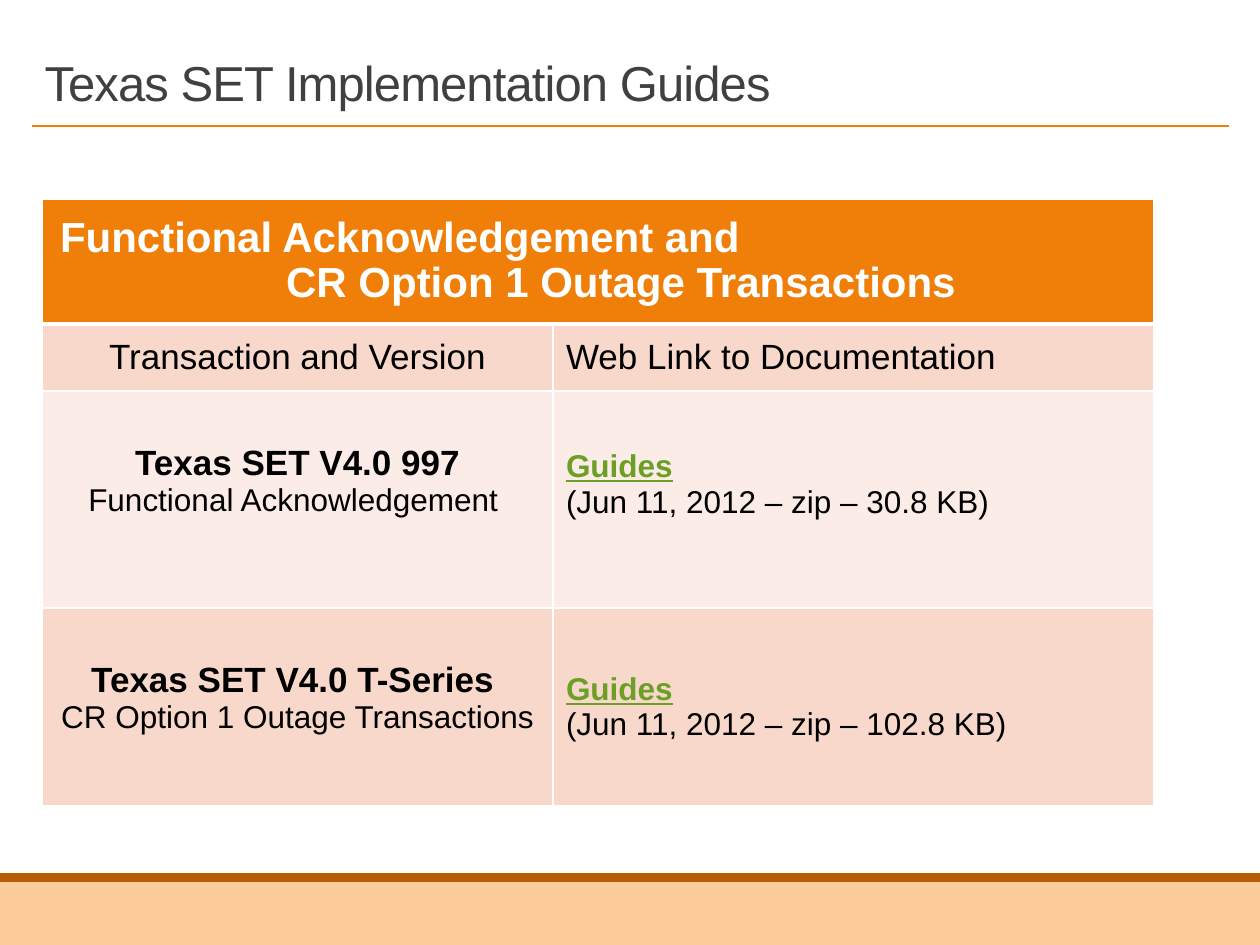
import pptx
import pptx.dml.color
import pptx.enum.shapes
import pptx.enum.text
import pptx.oxml
import pptx.oxml.ns
import pptx.util
from dataclasses import dataclass

ALIGN = pptx.enum.text.PP_ALIGN
ANCHOR = pptx.enum.text.MSO_ANCHOR
EMU_PER_PX = 914400 / 126


def px(length):
    return pptx.util.Emu(round(length * EMU_PER_PX))


def rgb(value):
    return pptx.dml.color.RGBColor.from_string(value)


@dataclass(frozen=True)
class Theme:
    font: str = "Arial"
    white: str = "FFFFFF"
    black: str = "000000"
    title_gray: str = "404040"
    orange: str = "F07F09"
    dark_orange: str = "B45F07"
    footer: str = "FBCC9A"
    band_dark: str = "F9D8CC"
    band_light: str = "FCECE7"
    link_green: str = "6B9F25"
    title_size: int = 28
    header_size: int = 24
    label_size: int = 20
    detail_size: int = 18


class SlideBuilder:
    def __init__(self, slide, theme):
        self.slide = slide
        self.theme = theme

    def format_run(self, run, size, color, **extra):
        values = {"name": self.theme.font, "size": pptx.util.Pt(size), **extra}
        for attribute, value in values.items():
            setattr(run.font, attribute, value)
        run.font.color.rgb = rgb(color)

    def band(self, left, top, width, height, color):
        bar = self.slide.shapes.add_shape(
            pptx.enum.shapes.MSO_SHAPE.RECTANGLE, *map(px, (left, top, width, height)))
        bar.shadow.inherit = False
        bar.fill.solid()
        bar.fill.fore_color.rgb = rgb(color)
        bar.line.fill.background()

    def rule(self, x1, y1, x2, y2, color):
        rule = self.slide.shapes.add_connector(
            pptx.enum.shapes.MSO_CONNECTOR.STRAIGHT, *map(px, (x1, y1, x2, y2)))
        rule.line.color.rgb = rgb(color)
        rule.line.width = pptx.util.Pt(1)
        effects = pptx.oxml.parse_xml(f'<a:effectLst {pptx.oxml.ns.nsdecls("a")}/>')
        rule._element.spPr.append(effects)

    def title(self, text, left, top, width, height):
        title = self.slide.shapes.title
        title.left, title.top, title.width, title.height = map(px, (left, top, width, height))
        frame = title.text_frame
        frame_format = {
            "word_wrap": True,
            "auto_size": pptx.enum.text.MSO_AUTO_SIZE.NONE,
            "vertical_anchor": ANCHOR.BOTTOM,
        }
        for attribute, value in frame_format.items():
            setattr(frame, attribute, value)
        paragraph = frame.paragraphs[0]
        paragraph.alignment = ALIGN.LEFT
        paragraph.line_spacing = 0.85
        run = paragraph.add_run()
        run.text = text
        self.format_run(run, self.theme.title_size, self.theme.title_gray)
        run.font._element.set("spc", "-50")

    def table(self, left, top, columns, rows):
        frame = self.slide.shapes.add_table(
            len(rows), len(columns), *map(px, (left, top, sum(columns), sum(rows))))
        table = frame.table
        table.first_row = table.horz_banding = False
        for column, width in zip(table.columns, columns):
            column.width = px(width)
        for row, height in zip(table.rows, rows):
            row.height = px(height)
        return table

    def cell(self, cell, fill, bottom_border=1, top_margin=13, bottom_margin=13,
             anchor=ANCHOR.MIDDLE):
        properties = cell._tc.get_or_add_tcPr()
        for side, width in zip("LRTB", (1, 1, 1, bottom_border)):
            properties.append(pptx.oxml.parse_xml(
                f'<a:ln{side} {pptx.oxml.ns.nsdecls("a")} w="{pptx.util.Pt(width)}">'
                f'<a:solidFill><a:srgbClr val="{self.theme.white}"/></a:solidFill></a:ln{side}>'))
        cell.fill.solid()
        cell.fill.fore_color.rgb = rgb(fill)
        cell_format = {
            "vertical_anchor": anchor,
            "margin_left": px(13),
            "margin_right": px(13),
            "margin_top": px(top_margin),
            "margin_bottom": px(bottom_margin),
        }
        for attribute, value in cell_format.items():
            setattr(cell, attribute, value)

    def lines(self, cell, lines, align):
        """Write one paragraph for each (text, size, color, bold, underline)."""
        frame = cell.text_frame
        for index, (text, size, color, bold, underline) in enumerate(lines):
            paragraph = frame.add_paragraph() if index else frame.paragraphs[0]
            paragraph.alignment = align
            run = paragraph.add_run()
            run.text = text
            self.format_run(run, size, color, bold=bold, underline=underline)
        return frame.paragraphs


def main():
    theme = Theme()
    presentation = pptx.Presentation()
    presentation.slide_width, presentation.slide_height = px(1260), px(945)
    slide = presentation.slides.add_slide(presentation.slide_layouts[5])
    builder = SlideBuilder(slide, theme)

    # Footer bands, title and its rule
    builder.band(0, 882, 1260, 63, theme.footer)
    builder.band(0, 873, 1260, 9, theme.dark_orange)
    builder.rule(32, 126, 1229, 126, theme.orange)
    builder.title("Texas SET Implementation Guides", 32, 32, 1040, 118 - 32)

    # Table header across both columns
    guides = builder.table(42, 199, columns=(511, 601), rows=(125, 67, 217, 198))
    header = guides.cell(0, 0)
    header.merge(guides.cell(0, 1))
    for column in range(2):
        builder.cell(guides.cell(0, column), theme.orange, bottom_border=3)
    heading = [(text, theme.header_size, theme.white, True, False) for text in
               ("Functional Acknowledgement and", "CR Option 1 Outage Transactions")]
    first, second = builder.lines(header, heading, ALIGN.CENTER)
    first.alignment = ALIGN.LEFT
    for paragraph, indent in ((first, 5), (second, 46)):
        paragraph.line_spacing = 0.95
        paragraph._p.get_or_add_pPr().set("marL", str(px(indent)))

    # Column labels
    labels = (("Transaction and Version", ALIGN.CENTER),
              ("Web Link to Documentation", ALIGN.LEFT))
    for column, (label, align) in enumerate(labels):
        cell = guides.cell(1, column)
        builder.cell(cell, theme.band_dark)
        builder.lines(cell, [(label, theme.label_size, theme.black, False, False)], align)

    # Transactions with their guides
    transactions = (
        ("Texas SET V4.0 997", "Functional Acknowledgement ",
         "(Jun 11, 2012 – zip – 30.8 KB)", theme.band_light, 43),
        ("Texas SET V4.0 T-Series ", "CR Option 1 Outage Transactions",
         "(Jun 11, 2012 – zip – 102.8 KB)", theme.band_dark, 13),
    )
    for row, (version, name, release, fill, link_bottom) in enumerate(transactions, start=2):
        transaction, link = guides.cell(row, 0), guides.cell(row, 1)
        builder.cell(transaction, fill, top_margin=53, anchor=ANCHOR.TOP)
        builder.lines(transaction, [
            (version, theme.label_size, theme.black, True, False),
            (name, theme.detail_size, theme.black, False, False),
        ], ALIGN.CENTER)
        builder.cell(link, fill, bottom_margin=link_bottom)
        builder.lines(link, [
            ("Guides", theme.detail_size, theme.link_green, True, True),
            (release, theme.detail_size, theme.black, False, False),
        ], ALIGN.LEFT)

    presentation.save("out.pptx")


if __name__ == "__main__":
    main()
